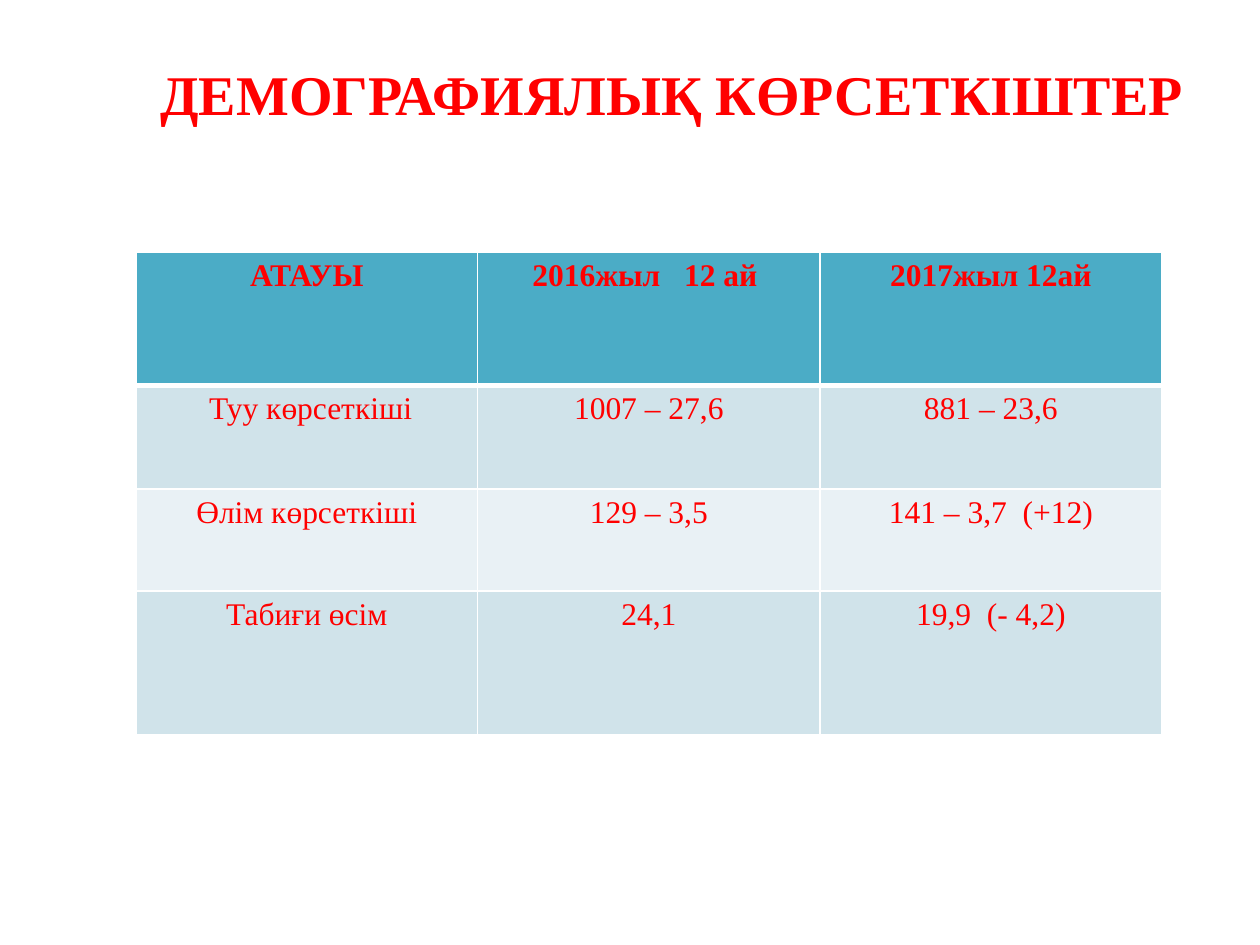
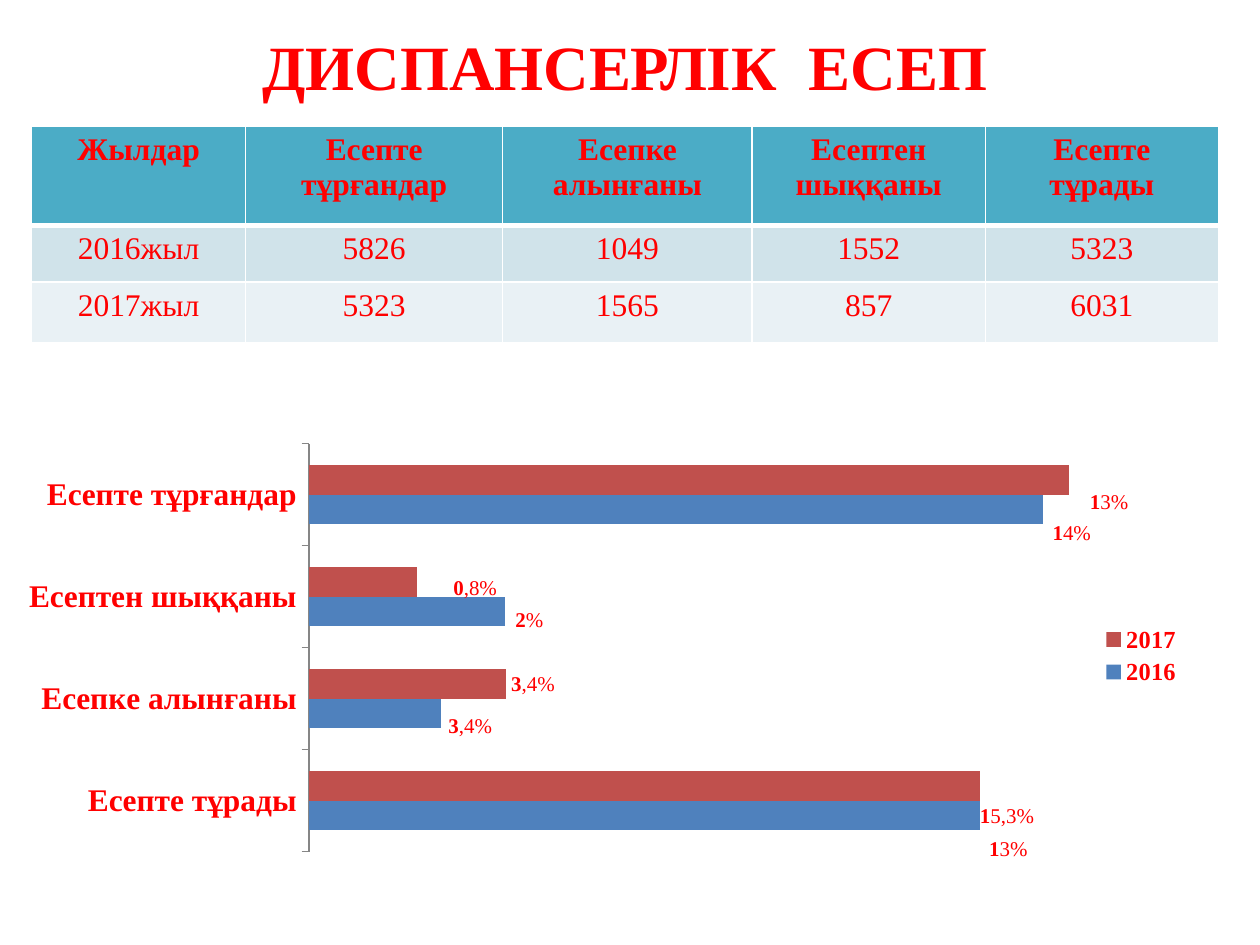
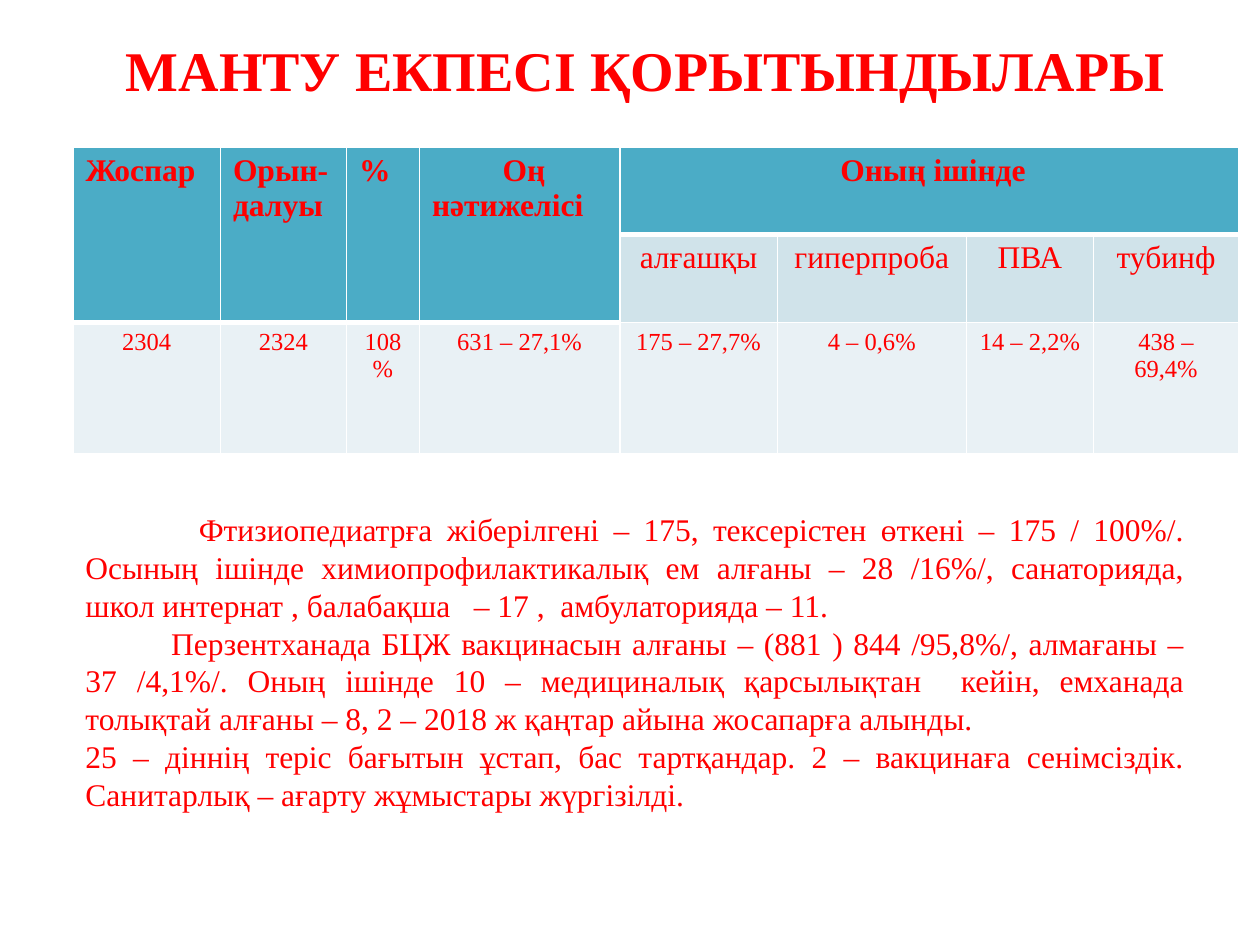
from lxml.etree import SubElement
from pptx import Presentation
from pptx.chart.data import CategoryChartData
from pptx.dml.color import RGBColor
from pptx.enum.chart import XL_CHART_TYPE, XL_LABEL_POSITION, XL_LEGEND_POSITION, XL_TICK_MARK
from pptx.enum.text import PP_ALIGN
from pptx.oxml import parse_xml
from pptx.oxml.ns import nsdecls, qn
from pptx.util import Pt

PX = 9144  # 100 px to the inch
FONT, RED, WHITE, OUTLINE = "Times New Roman", "FF0000", "FFFFFF", "5E457C"
HEAD, BANDS = "4BACC6", ("E9F1F5", "D0E3EA")
rgb = RGBColor.from_string


def write(tf, lines, align=PP_ALIGN.CENTER, indents=(), **fmt):
    """Fill a text frame, one paragraph a line, and return the runs."""
    runs = []
    for i, line in enumerate(lines):
        p = tf.paragraphs[0] if i == 0 else tf.add_paragraph()
        p.alignment = align
        if i < len(indents):
            p._p.get_or_add_pPr().set("indent", str(indents[i] * PX))
        r = p.add_run()
        r.text = line
        r.font.color.rgb = rgb(RED)
        for key, value in {"name": FONT, "size": Pt(18), "bold": False, **fmt}.items():
            setattr(r.font, key, value)
        runs.append(r)
    return runs


def add_grid(s, left, top, widths, heights, rows, left_cols=0, last_size=18):
    """Add a banded table; None marks a cell covered by the one above or to the left."""
    tbl = s.shapes.add_table(len(rows), len(widths), left * PX, top * PX,
                             sum(widths) * PX, sum(heights) * PX).table
    for col, w in zip(tbl.columns, widths):
        col.width = w * PX
    for row, h in zip(tbl.rows, heights):
        row.height = h * PX
    for i, row in enumerate(rows):
        for j, text in enumerate(row):
            head = i == 0 or text is None
            head_ends = head and i + 1 < len(rows) and rows[i + 1][j] is not None
            below_head = not head and (i == 1 or rows[i - 1][j] is None)
            cell = tbl.cell(i, j)
            cell.fill.solid()
            cell.fill.fore_color.rgb = rgb(HEAD if head else BANDS[i % 2])
            points = {"lnL": 1, "lnR": 1, "lnT": 3 if below_head else 1, "lnB": 3 if head_ends else 1}
            for k, (tag, pt) in enumerate(points.items()):
                cell._tc.get_or_add_tcPr().insert(k, parse_xml(
                    f'<a:{tag} {nsdecls("a")} w="{Pt(pt)}"><a:solidFill>'
                    f'<a:srgbClr val="{WHITE}"/></a:solidFill></a:{tag}>'))
            if text is not None:
                write(cell.text_frame, text.split("\n"),
                      PP_ALIGN.LEFT if head and j < left_cols else PP_ALIGN.CENTER,
                      bold=head, size=Pt(last_size if i == len(rows) - 1 else 18))
    return tbl


prs = Presentation()
prs.slide_width, prs.slide_height = 1000 * PX, 750 * PX

# Titles: text, left, top, width, height, size
titles = [
    ("ДЕМОГРАФИЯЛЫҚ КӨРСЕТКІШТЕР", 75, 42, 917, 64, 32),
    ("ДИСПАНСЕРЛІК  ЕСЕП", 50, 17, 892, 71, 36),
    ("МАНТУ ЕКПЕСІ ҚОРЫТЫНДЫЛАРЫ", 86, 23, 853, 64, 32),
]
slides = []
for text, x, y, w, h, size in titles:
    s = prs.slides.add_slide(prs.slide_layouts[6])
    tf = s.shapes.add_textbox(x * PX, y * PX, w * PX, h * PX).text_frame
    tf.word_wrap = False
    r = write(tf, [text], size=Pt(size), bold=True)[0]
    r._r.get_or_add_rPr().insert(0, parse_xml(
        f'<a:ln {nsdecls("a")} w="{Pt(0.71)}"><a:solidFill>'
        f'<a:srgbClr val="{OUTLINE}"/></a:solidFill></a:ln>'))
    slides.append(s)
demography, register, mantoux = slides

# Slide 1: demographic figures
add_grid(demography, 108, 200, [271, 272, 271], [106, 82, 81, 114], [
    ["АТАУЫ", "2016жыл   12 ай ", "2017жыл 12ай"],
    [" Туу көрсеткіші", "1007 – 27,6", "881 – 23,6"],
    ["Өлім көрсеткіші", "129 – 3,5", "141 – 3,7  (+12)"],
    ["Табиғи өсім", "24,1", "19,9  (- 4,2)"],
])

# Slide 2: register table
add_grid(register, 25, 100, [170, 204, 198, 185, 185], [79, 45, 48], [
    ["Жылдар", "Есепте тұрғандар", "Есепке алынғаны", "Есептен шыққаны", "Есепте тұрады"],
    ["2016жыл", "5826", "1049", "1552", "5323"],
    ["2017жыл", "5323", "1565", "857", "6031"],
])

# Slide 2: bar chart
chart_w, chart_h = 925, 417
data = CategoryChartData()
data.categories = ["Есепте тұрады", "Есепке алынғаны", "Есептен шыққаны", "Есепте тұрғандар"]
data.add_series("2016", [5323, 1049, 1552, 5826])
data.add_series("2017", [5323, 1565, 857, 6031])
chart = register.shapes.add_chart(XL_CHART_TYPE.BAR_CLUSTERED, 23 * PX, 312 * PX,
                                  chart_w * PX, chart_h * PX, data).chart
chart.has_title = False
chart.font.name, chart.font.size = "Calibri", Pt(18)
chart.font.color.rgb = rgb("000000")
chart.has_legend = True
chart.legend.position = XL_LEGEND_POSITION.RIGHT
chart.legend.include_in_layout = False
cat, val = chart.category_axis, chart.value_axis
cat.major_tick_mark = XL_TICK_MARK.OUTSIDE
cat.format.line.color.rgb = rgb("868686")
val.visible = val.has_major_gridlines = False
val.minimum_scale, val.maximum_scale = 0, 7000

# Bar colours and labels: text and its shift in px
series_format = [
    ("4F81BD", [("13%", 4, 27), ("3,4%", 2, 10), ("2%", 5, 7), ("14%", 4, 19)]),
    ("C0504D", [("15,3%", -4, 24), ("3,4%", 0, 0), ("0,8%", 25, 5), ("13%", 13, 18)]),
]
layouts = []
chart_fonts = [(cat.tick_labels.font, 18), (chart.legend.font, 14)]
plot = chart.plots[0]
plot.vary_by_categories = False
plot.gap_width, plot.overlap = 150, 0
for ser, (color, labels) in zip(plot.series, series_format):
    ser.format.fill.solid()
    ser.format.fill.fore_color.rgb = rgb(color)
    ser.data_labels.show_value = True
    chart_fonts.append((ser.data_labels.font, 12))
    for i, (text, dx, dy) in enumerate(labels):
        label = ser.points[i].data_label
        first = write(label.text_frame, [text[0]], size=Pt(12), bold=True)[0]
        rest = label.text_frame.paragraphs[0].add_run()
        rest.text = text[1:]
        rest.font.color.rgb = rgb(RED)
        rest.font.name, rest.font.size, rest.font.bold = FONT, first.font.size, False
        label.position = XL_LABEL_POSITION.OUTSIDE_END
        node = ser._element.xpath(f"c:dLbls/c:dLbl[c:idx/@val='{i}']")[0]
        layout = parse_xml(f'<c:layout {nsdecls("c")}/>')
        node.insert(1, layout)
        layouts.append((layout, {"x": dx, "y": dy}))
    for leader in ser._element.xpath("c:dLbls/c:showLeaderLines"):
        leader.set("val", "0")
for font, size in chart_fonts:
    font.color.rgb = rgb(RED)
    for key, value in {"name": FONT, "size": Pt(size), "bold": True}.items():
        setattr(font, key, value)

# Manual places of the labels and the plot area, as shares of the chart
area = chart._chartSpace.xpath("c:chart/c:plotArea")[0]
for old in area.findall(qn("c:layout")):
    area.remove(old)
layout = parse_xml(f'<c:layout {nsdecls("c")}/>')
area.insert(0, layout)
layouts.append((layout, {"layoutTarget": "inner", "xMode": "edge", "yMode": "edge",
                         "x": 220, "y": 40, "w": 702, "h": 324}))
whole = {"x": chart_w, "w": chart_w, "y": chart_h, "h": chart_h}
for layout, values in layouts:
    manual = SubElement(layout, qn("c:manualLayout"))
    for tag, value in values.items():
        share = round(value / whole[tag], 3) if tag in whole else value
        SubElement(manual, qn(f"c:{tag}")).set("val", str(share))

# Slide 3: Mantoux results, with merged headings
tbl = add_grid(mantoux, 58, 117, [117, 100, 58, 159, 125, 150, 101, 115], [69, 68, 104], [
    ["Жоспар", "Орын-\nдалуы", "%", "Оң нәтижелісі", " Оның ішінде", None, None, None],
    [None, None, None, None, "алғашқы", "гиперпроба", "ПВА", "тубинф"],
    ["2304", "2324", "108%", "631 – 27,1%", "175 – 27,7%", "4 – 0,6%", "14 – 2,2%", "438 – 69,4%"],
], left_cols=4, last_size=14)
tbl.cell(0, 3).text_frame.paragraphs[0]._p.get_or_add_pPr().set("indent", str(56 * PX))
for j in range(4):
    tbl.cell(0, j).merge(tbl.cell(1, j))
tbl.cell(0, 4).merge(tbl.cell(0, 7))

# Slide 3: body text
tf = mantoux.shapes.add_textbox(58 * PX, 400 * PX, 892 * PX, 283 * PX).text_frame
tf.word_wrap = True
write(tf, [
    "Фтизиопедиатрға жіберілгені – 175, тексерістен өткені – 175 / 100%/. Осының ішінде "
    "химиопрофилактикалық ем алғаны – 28 /16%/, санаторияда, школ интернат , "
    "балабақша   – 17 ,  амбулаторияда – 11.",
    "Перзентханада БЦЖ вакцинасын алғаны – (881 ) 844 /95,8%/, алмағаны – 37 /4,1%/. "
    "Оның ішінде 10 – медициналық қарсылықтан  кейін, емханада толықтай алғаны – 8, "
    "2 – 2018 ж қаңтар айына жосапарға алынды.",
    "25 – діннің теріс бағытын ұстап, бас тартқандар. 2 – вакцинаға сенімсіздік. "
    "Санитарлық – ағарту жұмыстары жүргізілді.",
], PP_ALIGN.JUSTIFY, indents=(90, 68))

prs.save("out.pptx")
